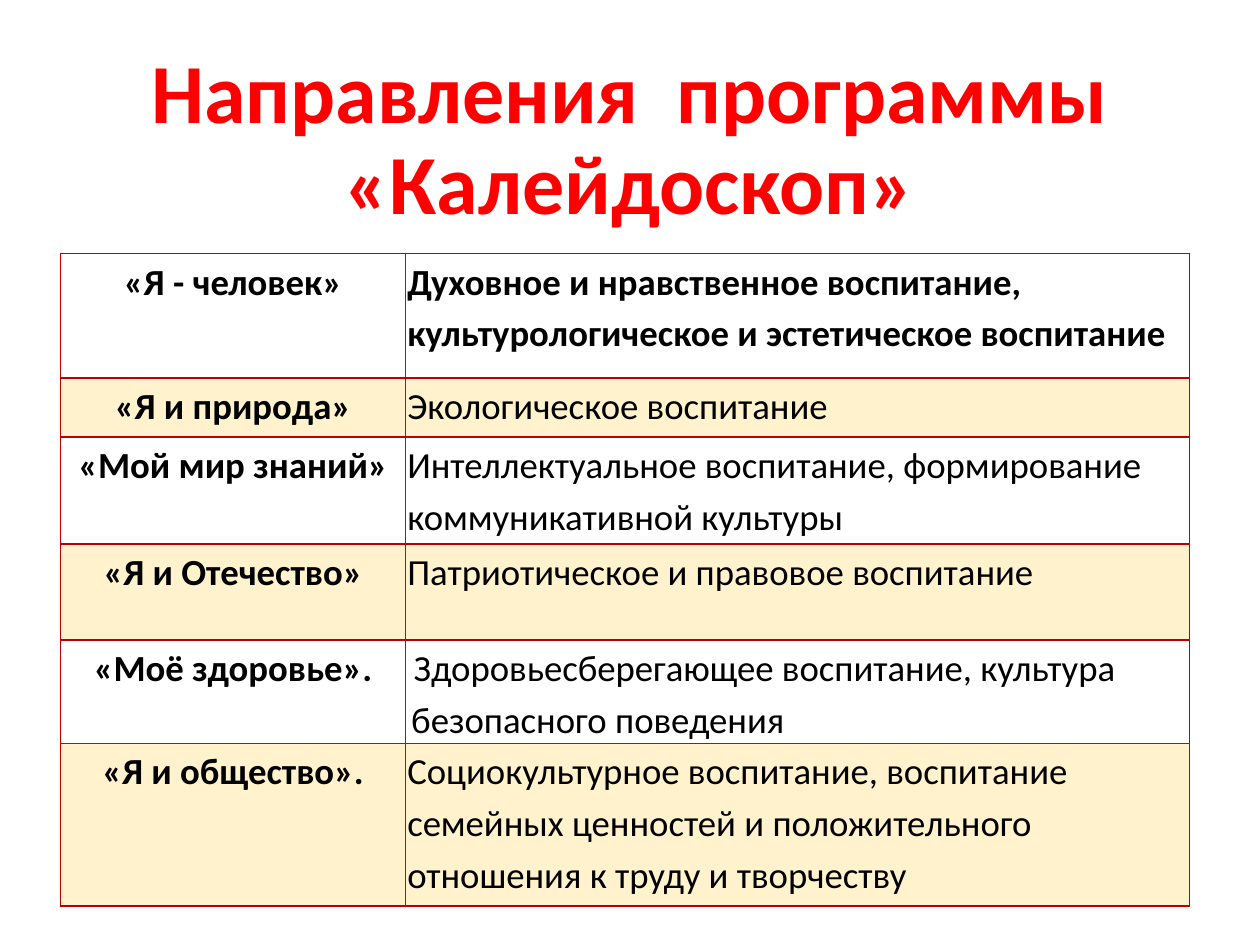
from lxml import etree
from pptx import Presentation
from pptx.dml.color import RGBColor
from pptx.enum.text import MSO_ANCHOR as Anchor, MSO_AUTO_SIZE as AutoSize, PP_ALIGN as Align
from pptx.oxml.ns import qn
from pptx.util import Cm, Pt

RED = RGBColor(0xFF, 0x00, 0x00)
BLACK = RGBColor(0x00, 0x00, 0x00)
AMBER = RGBColor(0xFF, 0xC0, 0x00)
CRIMSON = RGBColor(0xC0, 0x00, 0x00)
CHARCOAL = RGBColor(0x40, 0x40, 0x40)
FONT = "Calibri"

TITLE = "Направления  программы «Калейдоскоп»"
DIRECTIONS = [
    ("«Я - человек»", "Духовное и нравственное воспитание, культурологическое и эстетическое воспитание"),
    ("«Я и природа»", "Экологическое воспитание"),
    ("«Мой мир знаний»", "Интеллектуальное воспитание, формирование коммуникативной культуры"),
    ("«Я и Отечество»", "Патриотическое и правовое воспитание"),
    ("«Моё здоровье».", "Здоровьесберегающее воспитание, культура безопасного поведения"),
    ("«Я и общество».", "Социокультурное воспитание, воспитание семейных ценностей "
                        "и положительного отношения к труду и творчеству"),
]
HEALTH_ROW = 4
COLUMN_WIDTHS = [Cm(6.96), Cm(15.8)]
ROW_HEIGHTS = [Cm(2.51), Cm(1.19), Cm(2.16), Cm(1.93), Cm(2.08), Cm(3.28)]


def format_paragraph(paragraph, size, color, bold, align, spacing):
    paragraph.alignment = align
    paragraph.line_spacing = spacing
    for run in paragraph.runs:
        run.font.name = FONT
        run.font.size = Pt(size)
        run.font.bold = bold
        run.font.color.rgb = color


def set_borders(cell, colors):
    properties = cell._tc.get_or_add_tcPr()
    for position, (side, color) in enumerate(colors.items()):
        width = Pt(1) if color == CRIMSON else Pt(0.5)
        line = etree.Element(qn(f"a:ln{side}"), w=str(width))
        fill = etree.SubElement(line, qn("a:solidFill"))
        etree.SubElement(fill, qn("a:srgbClr"), val=str(color))
        properties.insert(position, line)


def fill_cell(cell, shaded):
    if not shaded:
        cell.fill.background()
        return
    cell.fill.solid()
    cell.fill.fore_color.rgb = AMBER
    color = cell._tc.tcPr.find(f".//{qn('a:srgbClr')}")
    etree.SubElement(color, qn("a:alpha"), val="20000")


def add_title(slide, left, top, width, height):
    title = slide.shapes.title
    title.left, title.top, title.width, title.height = left, top, width, height
    frame = title.text_frame
    frame.text = TITLE
    frame.auto_size = AutoSize.NONE
    frame.vertical_anchor = Anchor.MIDDLE
    format_paragraph(frame.paragraphs[0], 48, RED, True, Align.CENTER, 0.9)


def add_directions_table(slide, left, top):
    frame = slide.shapes.add_table(len(DIRECTIONS), len(COLUMN_WIDTHS), left, top,
                                   sum(COLUMN_WIDTHS), sum(ROW_HEIGHTS))
    table = frame.table
    table.first_row = False
    table.horz_banding = False
    for column, width in zip(table.columns, COLUMN_WIDTHS):
        column.width = width
    for row, height in zip(table.rows, ROW_HEIGHTS):
        row.height = height
    for row_index, texts in enumerate(DIRECTIONS):
        for column_index, text in enumerate(texts):
            is_name = column_index == 0
            cell = table.cell(row_index, column_index)
            cell.margin_left = cell.margin_right = Cm(0.03)
            cell.margin_top = cell.margin_bottom = 0
            cell.text_frame.text = text
            paragraph = cell.text_frame.paragraphs[0]
            format_paragraph(paragraph, 21, BLACK, is_name or row_index == 0,
                             Align.CENTER if is_name else Align.LEFT, 1.15)
            if row_index == HEALTH_ROW and not is_name:
                properties = paragraph._p.get_or_add_pPr()
                properties.set("marL", str(Cm(0.08)))
                properties.set("indent", str(Cm(0.05)))
            fill_cell(cell, row_index % 2 == 1)
            set_borders(cell, {
                "L": CRIMSON if is_name else CHARCOAL,
                "R": CHARCOAL if is_name else CRIMSON,
                "T": CHARCOAL if row_index == HEALTH_ROW + 1 else CRIMSON,
                "B": CHARCOAL if row_index == HEALTH_ROW else CRIMSON,
            })


def main():
    presentation = Presentation()
    presentation.slide_width = Cm(25.4)
    presentation.slide_height = Cm(19.05)
    slide = presentation.slides.add_slide(presentation.slide_layouts[5])
    add_title(slide, Cm(1.75), Cm(1.14), Cm(21.9), Cm(3.43))
    add_directions_table(slide, Cm(1.22), Cm(5.11))
    presentation.save("out.pptx")


if __name__ == "__main__":
    main()
